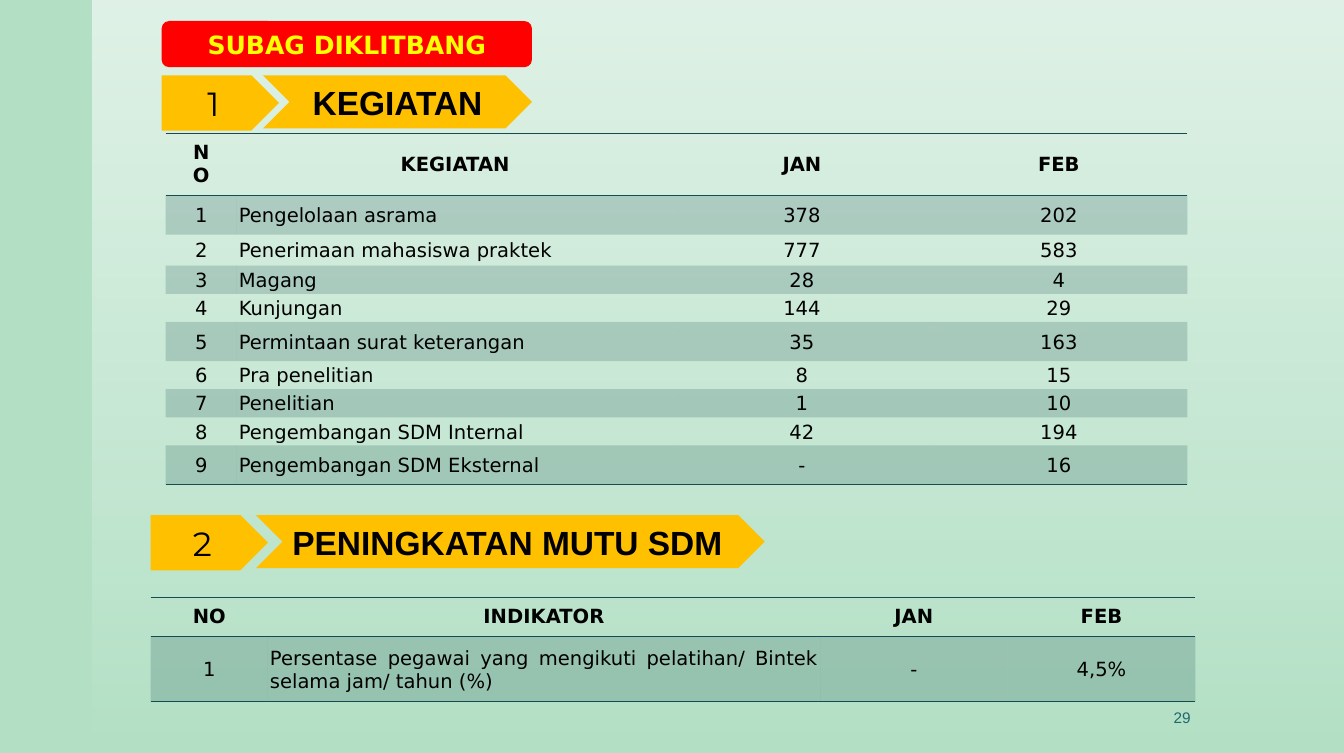
from pptx import Presentation
from pptx.dml.color import RGBColor as RGB
from pptx.enum.shapes import MSO_SHAPE as Shape
from pptx.enum.text import MSO_ANCHOR as Anchor, PP_ALIGN as Align
from pptx.oxml.ns import qn
from pptx.util import Inches, Pt
from lxml.etree import SubElement

# Content
TITLE = "SUBAG DIKLITBANG"
PAGE = "29"
HEADS = [  # number, heading, alignment, tag box, heading box
    ("1", "KEGIATAN", Align.CENTER, (1.61, 0.75, 1.17, 0.55), (2.62, 0.75, 2.68, 0.53)),
    ("2", "PENINGKATAN MUTU SDM", Align.LEFT, (1.5, 5.13, 1.17, 0.55), (2.55, 5.13, 5.07, 0.53)),
]
WORK = [
    ("NO", "KEGIATAN", "JAN", "FEB"),
    ("1", "Pengelolaan asrama", "378", "202"),
    ("2", "Penerimaan mahasiswa praktek", "777", "583"),
    ("3", "Magang", "28", "4"),
    ("4", "Kunjungan", "144", "29"),
    ("5", "Permintaan surat keterangan", "35", "163"),
    ("6", "Pra penelitian", "8", "15"),
    ("7", "Penelitian", "1", "10"),
    ("8", "Pengembangan SDM Internal", "42", "194"),
    ("9", "Pengembangan SDM Eksternal", "-", "16"),
]
STAFF = [
    ("NO", "INDIKATOR", "JAN", "FEB"),
    ("1", "Persentase pegawai yang mengikuti pelatihan/ Bintek selama jam/ tahun (%)", "-", "4,5%"),
]
TABLES = [  # rows, left, top, column widths, row heights, alignment of column 2
    (WORK, 1.65, 1.33, (0.71, 4.35, 2.56, 2.56),
     (0.43, 0.39, 0.31, 0.28, 0.28, 0.39, 0.28, 0.28, 0.28, 0.39), Align.LEFT),
    (STAFF, 1.5, 5.95, (1.17, 5.5, 1.87, 1.87), (0.38, 0.65), Align.JUSTIFY),
]
COLORS = {"back": "B3E0C5", "white": "FFFFFF", "teal": "164B4F", "page": "1F696F",
          "red": "FF0000", "yellow": "FFFF00", "gold": "FFC000", "black": "000000"}
PLAIN = "{2D5ABB26-0587-4C30-8999-92F81FD0307C}"  # table style without grid


def color(name):
    return RGB.from_string(COLORS[name])


def fade(node, share):
    """Set the opacity, in percent, of each colour under node."""
    for tone in node.iter(qn("a:srgbClr")):
        SubElement(tone, qn("a:alpha"), val=str(share * 1000))


def write(frame, text, size=14, font="DejaVu Sans", tone="black", bold=False, align=Align.CENTER):
    frame.word_wrap = True
    par = frame.paragraphs[0]
    par.alignment = align
    run = par.add_run()
    run.text = text
    run.font.size, run.font.name, run.font.bold = Pt(size), font, bold
    run.font.color.rgb = color(tone)


def draw(home, kind, box, fill):
    shape = home.add_shape(kind, *map(Inches, box))
    shape.shadow.inherit = False
    shape.line.fill.background()
    shape.fill.solid()
    shape.fill.fore_color.rgb = color(fill)
    shape.text_frame.vertical_anchor = Anchor.MIDDLE
    return shape


def rule(cell, side):
    line = SubElement(cell._tc.get_or_add_tcPr(), qn("a:" + side), w=str(Pt(1)))
    SubElement(SubElement(line, qn("a:solidFill")), qn("a:srgbClr"), val=COLORS["teal"])


def fill_cell(cell, text, row, col, last, align):
    head = row == 0
    pad = (0.2, 0.08, 0.2, 0.08) if head else (0.02, 0.02, 0.02, 0)
    cell.margin_left, cell.margin_top, cell.margin_right, cell.margin_bottom = map(Inches, pad)
    cell.vertical_anchor = Anchor.MIDDLE
    if head:
        rule(cell, "lnT")
    if head or row == last:
        rule(cell, "lnB")
    if row % 2:
        cell.fill.solid()
        cell.fill.fore_color.rgb = color("teal")
        fade(cell._tc.tcPr.find(qn("a:solidFill")), 20)
    else:
        cell.fill.background()
    write(cell.text_frame, text, bold=head, align=Align.CENTER if head or col != 1 else align)


def add_grid(shapes, rows, left, top, widths, heights, align):
    box = map(Inches, (left, top, sum(widths), sum(heights)))
    grid = shapes.add_table(len(rows), len(widths), *box).table
    grid.first_row = grid.horz_banding = False
    grid._tbl.tblPr.find(qn("a:tableStyleId")).text = PLAIN
    for col, width in zip(grid.columns, widths):
        col.width = Inches(width)
    for r, texts in enumerate(rows):
        grid.rows[r].height = Inches(heights[r])
        for c, text in enumerate(texts):
            fill_cell(grid.cell(r, c), text, r, c, len(rows) - 1, align)


def main():
    deck = Presentation()
    deck.slide_width, deck.slide_height = Inches(13.39), Inches(7.5)
    slide = deck.slides.add_slide(deck.slide_layouts[6])
    shapes = slide.shapes

    # Background with a white veil that fades downwards
    slide.background.fill.solid()
    slide.background.fill.fore_color.rgb = color("back")
    veil = draw(shapes, Shape.RECTANGLE, (0.92, 0, 12.47, 7.5), "white")
    veil.fill.gradient()
    veil.fill.gradient_angle = 270
    for stop, share in zip(veil.fill.gradient_stops, (60, 0)):
        stop.color.rgb = color("white")
        fade(stop._gs, share)

    # Tables
    for spec in TABLES:
        add_grid(shapes, *spec)

    # Title and page number
    title = draw(shapes, Shape.ROUNDED_RECTANGLE, (1.61, 0.21, 3.69, 0.46), "red")
    write(title.text_frame, TITLE, size=18, tone="yellow", bold=True)
    page = shapes.add_textbox(*map(Inches, (8.84, 6.95, 3.12, 0.4)))
    page.text_frame.vertical_anchor = Anchor.MIDDLE
    write(page.text_frame, PAGE, size=11, font="Arial", tone="page", align=Align.RIGHT)

    # Section headings
    for num, text, align, tag_box, box in HEADS:
        group = shapes.add_group_shape().shapes
        tag = draw(group, Shape.PENTAGON, tag_box, "gold")
        write(tag.text_frame, num, size=24, font="Montserrat")
        head = draw(group, Shape.CHEVRON, box, "gold")
        write(head.text_frame, text, size=24, font="Arial", bold=True, align=align)

    deck.save("out.pptx")


if __name__ == "__main__":
    main()
